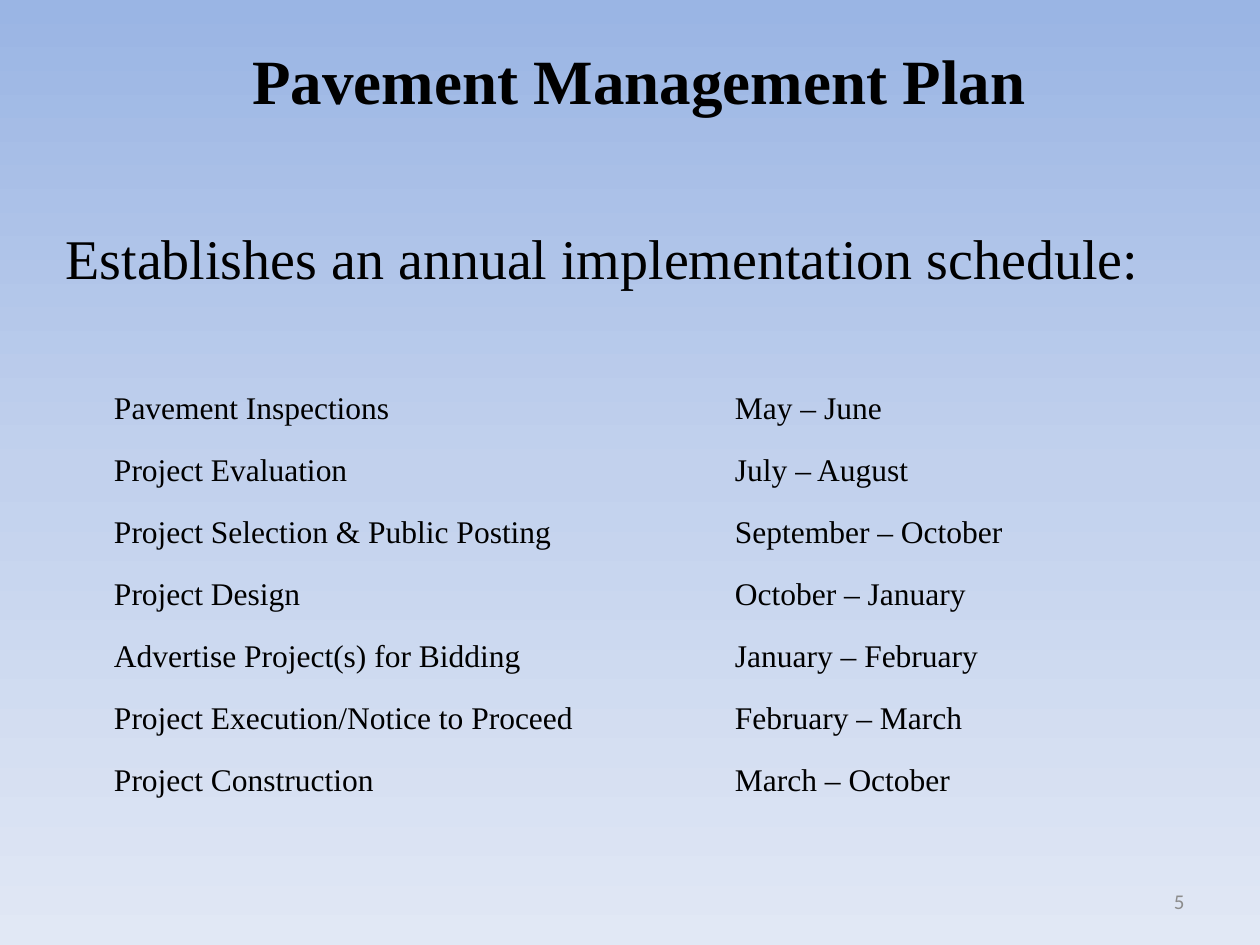
from copy import deepcopy

from pptx import Presentation
from pptx.dml.color import RGBColor
from pptx.enum.text import MSO_ANCHOR, PP_ALIGN
from pptx.oxml import parse_xml
from pptx.oxml.ns import nsdecls, qn
from pptx.util import Emu, Pt

PX = 914400 // 126
SERIF, SANS = "Times New Roman", "Calibri"
NO_GRID = "{2D5ABB26-0587-4C30-8999-92F81FD0307C}"
COLORS = {
    "text": "000000",
    "number": "8C8C8C",
    "sky_top": "9AB5E4",
    "sky_middle": "C2D1ED",
    "sky_bottom": "E1E8F5",
}
SCHEDULE = [
    ("Pavement Inspections", "May – June"),
    ("Project Evaluation", "July – August"),
    ("Project Selection & Public Posting", "September – October"),
    ("Project Design", "October – January"),
    ("Advertise Project(s) for Bidding", "January – February"),
    ("Project Execution/Notice to Proceed", "February – March"),
    ("Project Construction", "March – October"),
]


def px(n):
    """Turn whole pixels into EMU."""
    return Emu(n * PX)


def rgb(name):
    """Look up a named colour."""
    return RGBColor.from_string(COLORS[name])


def place(sp, x, y, w, h):
    """Move and size a shape."""
    sp.left, sp.top, sp.width, sp.height = px(x), px(y), px(w), px(h)


def add_run(p, text, size, font=SERIF, color="text", bold=False):
    """Add one formatted run to a paragraph."""
    r = p.add_run()
    r.text = text
    r.font.name, r.font.size, r.font.bold = font, Pt(size), bold
    r.font.color.rgb = rgb(color)


def fill_background(s):
    """Give the slide a vertical gradient of three stops."""
    fill = s.background.fill
    fill.gradient()
    fill.gradient_angle = 270
    stops = s.element.find(".//" + qn("a:gsLst"))
    stops.append(deepcopy(stops[-1]))
    names = ("sky_top", "sky_middle", "sky_bottom")
    for i, (stop, name) in enumerate(zip(fill.gradient_stops, names)):
        stop.position = i / 2
        stop.color.rgb = rgb(name)


def fill_title(s, text):
    """Write the title placeholder."""
    sp = s.shapes.title
    place(sp, 72, 0, 1134, 158)
    tf = sp.text_frame
    tf.vertical_anchor = MSO_ANCHOR.MIDDLE
    p = tf.paragraphs[0]
    p.alignment = PP_ALIGN.CENTER
    add_run(p, text, 36, bold=True)


def fill_body(s, text):
    """Write the body placeholder as one line without a bullet."""
    sp = s.placeholders[1]
    place(sp, 53, 217, 1134, 624)
    p = sp.text_frame.paragraphs[0]
    pPr = p._p.get_or_add_pPr()
    pPr.set("marL", "0")
    pPr.set("indent", "0")
    pPr.append(parse_xml(f"<a:buNone {nsdecls('a')}/>"))
    add_run(p, text, 32)


def add_number(s, text):
    """Add the slide number at the bottom right."""
    sp = s.shapes.add_textbox(px(903), px(876), px(294), px(50))
    tf = sp.text_frame
    tf.word_wrap = True
    tf.vertical_anchor = MSO_ANCHOR.MIDDLE
    p = tf.paragraphs[0]
    p.alignment = PP_ALIGN.RIGHT
    add_run(p, text, 12, SANS, "number")


def add_schedule(s, rows, x, y, widths, row_h):
    """Add the schedule as a table without grid lines or fills."""
    frame = s.shapes.add_table(len(rows), len(widths), px(x), px(y),
                               px(sum(widths)), px(row_h * len(rows)))
    table = frame.table
    table.first_row = table.horz_banding = False
    frame._element.find(".//" + qn("a:tableStyleId")).text = NO_GRID
    for col, width in zip(table.columns, widths):
        col.width = px(width)
    for row, texts in zip(table.rows, rows):
        row.height = px(row_h)
        for cell, text in zip(row.cells, texts):
            cell.fill.background()
            cell.vertical_anchor = MSO_ANCHOR.MIDDLE
            cell.margin_left = cell.margin_right = px(9)
            cell.margin_top = cell.margin_bottom = 0
            p = cell.text_frame.paragraphs[0]
            p.alignment = PP_ALIGN.JUSTIFY
            add_run(p, text, 18)


def main():
    """Build and save the slide."""
    prs = Presentation()
    prs.slide_width, prs.slide_height = px(1260), px(945)
    s = prs.slides.add_slide(prs.slide_layouts[1])
    fill_background(s)
    fill_title(s, "Pavement Management Plan")
    fill_body(s, "Establishes an annual implementation schedule:")
    add_number(s, "5")
    add_schedule(s, SCHEDULE, 105, 378, (621, 314), 62)
    prs.save("out.pptx")


if __name__ == "__main__":
    main()
